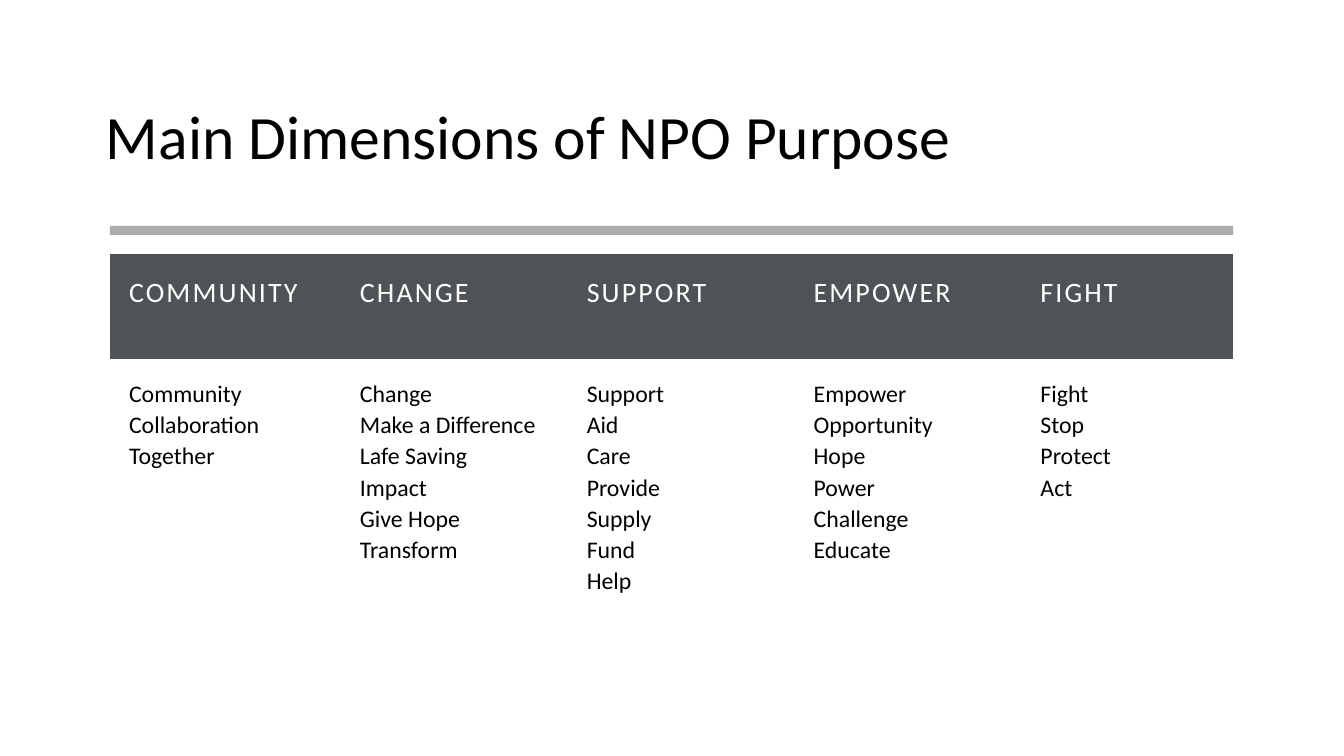
from pptx import Presentation
from pptx.dml.color import RGBColor
from pptx.enum.shapes import MSO_SHAPE
from pptx.enum.text import MSO_ANCHOR, PP_ALIGN
from pptx.oxml.ns import qn
from pptx.util import Inches, Pt
from lxml import etree

BLACK = RGBColor(0x00, 0x00, 0x00)
WHITE = RGBColor(0xFF, 0xFF, 0xFF)
SLATE = RGBColor(0x50, 0x53, 0x56)
GRAY = RGBColor(0x80, 0x80, 0x80)
FONT = "Calibri"
NO_STYLE_NO_GRID = "{2D5ABB26-0587-4C30-8999-92F81FD0307C}"
LEFT, WIDTH = Inches(1.09), Inches(11.14)

COLUMNS = [
    ("COMMUNITY", 2.29, ["Community", "Collaboration", "Together"]),
    ("CHANGE", 2.25, ["Change", "Make a Difference", "Lafe Saving", "Impact",
                      "Give Hope", "Transform"]),
    ("SUPPORT", 2.25, ["Support", "Aid", "Care", "Provide", "Supply", "Fund", "Help"]),
    ("EMPOWER", 2.25, ["Empower", "Opportunity", "Hope", "Power", "Challenge", "Educate"]),
    ("FIGHT", 2.1, ["Fight", "Stop", "Protect", "Act"]),
]


def write_lines(tf, lines, size, color, line_spacing, tracking=0):
    """Write one paragraph per line; tracking is in hundredths of a point."""
    for i, line in enumerate(lines):
        p = tf.paragraphs[0] if i == 0 else tf.add_paragraph()
        p.alignment = PP_ALIGN.LEFT
        p.line_spacing = line_spacing
        r = p.add_run()
        r.text = line
        for name, value in {"name": FONT, "size": Pt(size), "bold": False}.items():
            setattr(r.font, name, value)
        r.font.color.rgb = color
        if tracking:
            r.font._element.set("spc", str(tracking))


prs = Presentation()
prs.slide_width, prs.slide_height = Inches(13.33), Inches(7.5)
s = prs.slides.add_slide(prs.slide_layouts[5])

title = s.shapes.title
title.left, title.top = Inches(0.95), Inches(0.66)
title.width, title.height = Inches(11.43), Inches(1.45)
title.text_frame.vertical_anchor = MSO_ANCHOR.MIDDLE
write_lines(title.text_frame, ["Main Dimensions of NPO Purpose"], 44, BLACK, 0.9)

rule = s.shapes.add_shape(MSO_SHAPE.RECTANGLE, LEFT, Inches(2.24), WIDTH, Inches(0.09))
rule.shadow.inherit = False
rule.fill.solid()
rule.fill.fore_color.rgb = GRAY
rule.line.fill.background()
rule_color = rule._element.spPr.find(qn("a:solidFill")).find(qn("a:srgbClr"))
etree.SubElement(rule_color, qn("a:alpha")).set("val", "65000")

table = s.shapes.add_table(2, len(COLUMNS), LEFT, Inches(2.52), WIDTH, Inches(4.52)).table
table.first_row = table.horz_banding = False
table._tbl.tblPr.find(qn("a:tableStyleId")).text = NO_STYLE_NO_GRID
table.rows[0].height, table.rows[1].height = Inches(1.04), Inches(3.48)

for col, (heading, width, words) in enumerate(COLUMNS):
    table.columns[col].width = Inches(width)
    header, body = table.cell(0, col), table.cell(1, col)
    for cell in (header, body):
        for side in ("left", "top", "right", "bottom"):
            setattr(cell, f"margin_{side}", Inches(0.19))
    header.fill.solid()
    header.fill.fore_color.rgb = SLATE
    body.fill.background()
    write_lines(header.text_frame, [heading], 20, WHITE, 1.07, tracking=150)
    write_lines(body.text_frame, words, 17, BLACK, 1.07)

prs.save("out.pptx")
